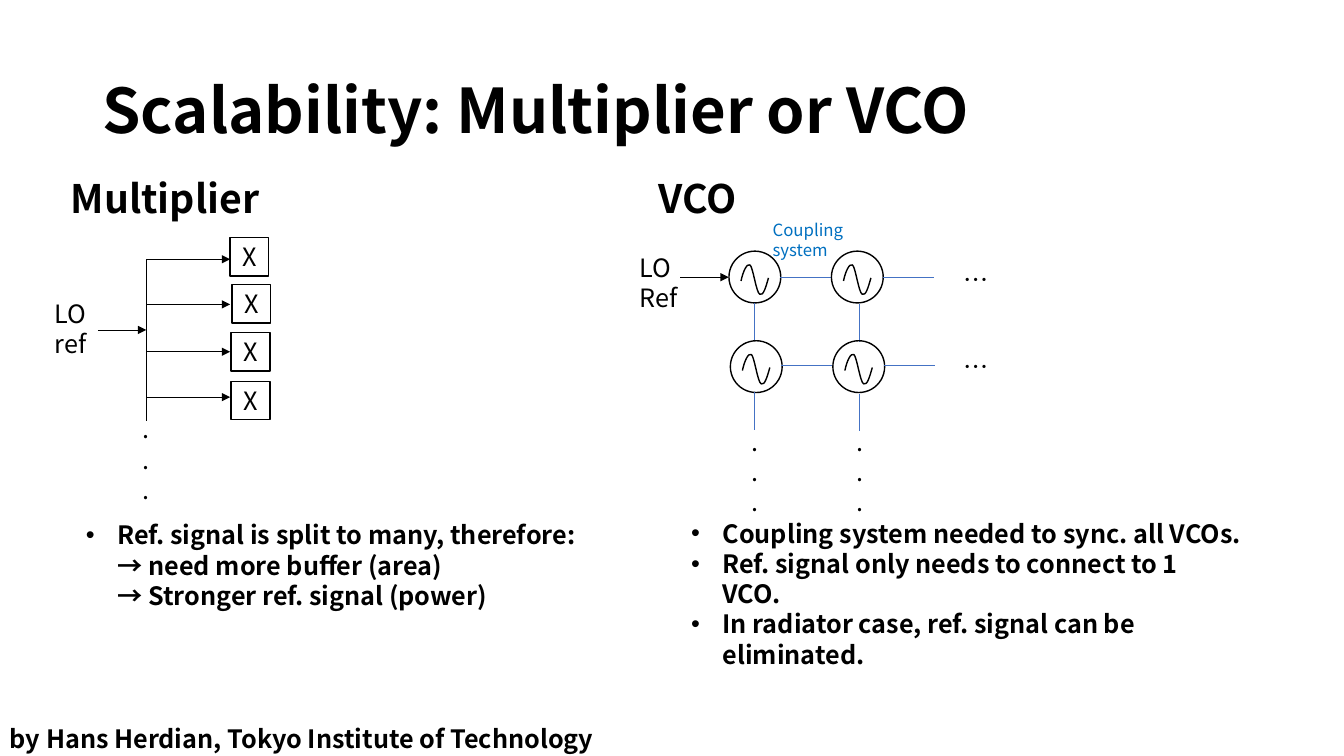
from dataclasses import dataclass

from lxml import etree
from pptx import Presentation
from pptx.dml.color import RGBColor
from pptx.enum.shapes import MSO_CONNECTOR, MSO_SHAPE
from pptx.enum.text import MSO_ANCHOR, PP_ALIGN
from pptx.oxml.ns import qn
from pptx.util import Pt

STRAIGHT = MSO_CONNECTOR.STRAIGHT
RECTANGLE = MSO_SHAPE.RECTANGLE
OVAL = MSO_SHAPE.OVAL
TOP, MIDDLE = MSO_ANCHOR.TOP, MSO_ANCHOR.MIDDLE
LEFT, CENTER = PP_ALIGN.LEFT, PP_ALIGN.CENTER


@dataclass(frozen=True)
class Theme:
    """Colours, font and type sizes of the slide."""
    font: str = "Noto Sans CJK JP"
    ink: RGBColor = RGBColor(0, 0, 0)
    label: RGBColor = RGBColor(0x00, 0x70, 0xC0)
    link: RGBColor = RGBColor(0x44, 0x72, 0xC4)
    title: int = 44
    heading: int = 28
    body: int = 18
    small: int = 12
    outline: float = 1
    wire: float = 0.5


THEME = Theme()
DOTS = (".", ".", ".")
WAVE_START = (0, 11.5)
WAVE_CURVES = (
    ((1.3, 5), (4.2, -1.4), (6.4, 0)),
    ((8.6, 1.6), (10.8, 19.6), (13.4, 21)),
    ((16, 22.4), (17.8, 15.6), (19.6, 9.3)),
)
MULTIPLIERS = ((185.2, 164.2, 169.7), (217.4, 165.6, 203.2),
               (251.3, 165, 237.6), (283.7, 165, 272.4))


def write_text(shape, paragraphs, *, size=THEME.body, color=THEME.ink, bold=False,
               align=LEFT, anchor=TOP, wrap=True, spacing=None, before=None, bullet=False):
    """Fill a shape with formatted paragraphs."""
    frame = shape.text_frame
    frame.word_wrap = wrap
    frame.vertical_anchor = anchor
    for index, text in enumerate(paragraphs):
        paragraph = frame.add_paragraph() if index else frame.paragraphs[0]
        paragraph.text = text
        paragraph.alignment = align
        paragraph.line_spacing = spacing
        paragraph.space_before = before
        if bullet:
            add_bullet(paragraph)
        for run in paragraph.runs:
            run.font.size = Pt(size)
            run.font.bold = bold
            run.font.color.rgb = color
            run.font.name = THEME.font
            etree.SubElement(run.font._element, qn("a:ea"), typeface=THEME.font)


def add_bullet(paragraph):
    """Give a paragraph a round bullet and a hanging indent."""
    properties = paragraph._p.get_or_add_pPr()
    properties.set("marL", str(Pt(22.5)))
    properties.set("indent", str(-Pt(22.5)))
    etree.SubElement(properties, qn("a:buFont"), typeface="Arial")
    etree.SubElement(properties, qn("a:buChar"), char="•")


def add_text(slide, left, top, width, height, *paragraphs, **text_format):
    """Add a text box."""
    box = slide.shapes.add_textbox(Pt(left), Pt(top), Pt(width), Pt(height))
    write_text(box, paragraphs, **text_format)


def add_wire(slide, start, end, color=THEME.ink, arrow=False):
    """Add a thin straight line, with an arrowhead at its end if asked."""
    wire = slide.shapes.add_connector(STRAIGHT, *(Pt(value) for value in (*start, *end)))
    wire.line.color.rgb = color
    wire.line.width = Pt(THEME.wire)
    if arrow:
        etree.SubElement(wire.line._get_or_add_ln(), qn("a:tailEnd"), type="triangle")
    etree.SubElement(wire._element.spPr, qn("a:effectLst"))


def add_outline(parent, kind, left, top, width, height):
    """Add an outlined preset shape."""
    shape = parent.shapes.add_shape(kind, Pt(left), Pt(top), Pt(width), Pt(height))
    style_outline(shape)
    return shape


def style_outline(shape):
    """Leave a shape empty with a black outline."""
    shape.shadow.inherit = False
    shape.fill.background()
    shape.line.color.rgb = THEME.ink
    shape.line.width = Pt(THEME.outline)


def add_wave(parent, left, top):
    """Add one period of a wave made of cubic curves."""
    ends = [(Pt(left + x), Pt(top + y)) for *_, (x, y) in WAVE_CURVES]
    builder = parent.shapes.build_freeform(Pt(left + WAVE_START[0]), Pt(top + WAVE_START[1]))
    builder.add_line_segments(ends, close=False)
    wave = builder.convert_to_shape()
    style_outline(wave)
    segments = list(wave._element.iter(qn("a:lnTo")))
    for segment, curve in zip(segments, WAVE_CURVES):
        cubic = etree.Element(qn("a:cubicBezTo"))
        for x, y in curve:
            etree.SubElement(cubic, qn("a:pt"), x=str(Pt(x)), y=str(Pt(y)))
        segment.getparent().replace(segment, cubic)


def add_oscillator(slide, left, top):
    """Add a circle grouped with the wave inside it."""
    group = slide.shapes.add_group_shape()
    add_outline(group, OVAL, left, top, 37, 37)
    add_wave(group, left + 8.6, top + 9.8)


def add_multiplier(slide):
    """Draw the reference bus that feeds the multipliers."""
    bus = 104.4
    add_wire(slide, (70, 235.7), (bus, 235.7), arrow=True)
    add_text(slide, 32, 209.5, 55.5, 51, "LO ref")
    add_wire(slide, (bus, 185.2), (bus, 301))
    for level, left, top in MULTIPLIERS:
        add_wire(slide, (bus, level), (164.4, level), arrow=True)
        box = add_outline(slide, RECTANGLE, left, top, 27.8, 27.5)
        write_text(box, ["X"], align=CENTER, anchor=MIDDLE)
    add_text(slide, 94.5, 291.9, 19.5, 73, *DOTS, wrap=False)


def add_vco_grid(slide):
    """Draw the grid of coupled oscillators."""
    for row in range(2):
        for column in range(2):
            add_oscillator(slide, 520.7 + 73.2 * column + row, 179.4 + 64 * row)
            across, level = 557.4 + 73.5 * column + 0.5 * row, 198 + 63.2 * row
            add_wire(slide, (across, level), (across + 36.5, level), THEME.link)
            down, start = 539 + 74.7 * column, 216.2 + 64 * row + column
            add_wire(slide, (down, start), (down, start + 26.8), THEME.link)
        add_text(slide, 681, 185 + 62.7 * row, 51, 29, "…")
    for column in range(2):
        add_text(slide, 529.6 + 75 * column, 300.8, 19.5, 73, *DOTS, wrap=False)
    add_wire(slide, (486, 198), (520.6, 198), arrow=True)
    add_text(slide, 450, 176.5, 55.5, 51, "LO Ref")
    add_text(slide, 544.8, 153.5, 81.5, 36, "Coupling", "system",
             size=THEME.small, color=THEME.label)


def main():
    """Build and save the slide."""
    presentation = Presentation()
    presentation.slide_width, presentation.slide_height = Pt(960), Pt(540)
    slide = presentation.slides.add_slide(presentation.slide_layouts[5])
    title = slide.shapes.title
    title.left, title.top, title.width, title.height = Pt(66), Pt(28.8), Pt(828), Pt(104.4)
    write_text(title, ["Scalability: Multiplier or VCO"], size=THEME.title, bold=True,
               anchor=MIDDLE, spacing=0.9)
    for left, heading in ((43.5, "Multiplier"), (463.5, "VCO")):
        add_text(slide, left, 124.5, 420, 322, heading, size=THEME.heading, bold=True,
                 spacing=0.9, before=Pt(10))
    add_multiplier(slide)
    add_vco_grid(slide)
    add_text(slide, 54.3, 367.6, 370, 73,
             "Ref. signal is split to many, therefore:\v"
             "→ need more buffer (area)\v→ Stronger ref. signal (power)",
             bold=True, bullet=True)
    add_text(slide, 486.6, 366.5, 407.5, 160,
             "Coupling system needed to sync. all VCOs.",
             "Ref. signal only needs to connect to 1 VCO.",
             "In radiator case, ref. signal can be eliminated.",
             bold=True, bullet=True)
    add_text(slide, 0, 513.4, 435, 29, "by Hans Herdian, Tokyo Institute of Technology",
             bold=True, wrap=False)
    presentation.save("out.pptx")


if __name__ == "__main__":
    main()
